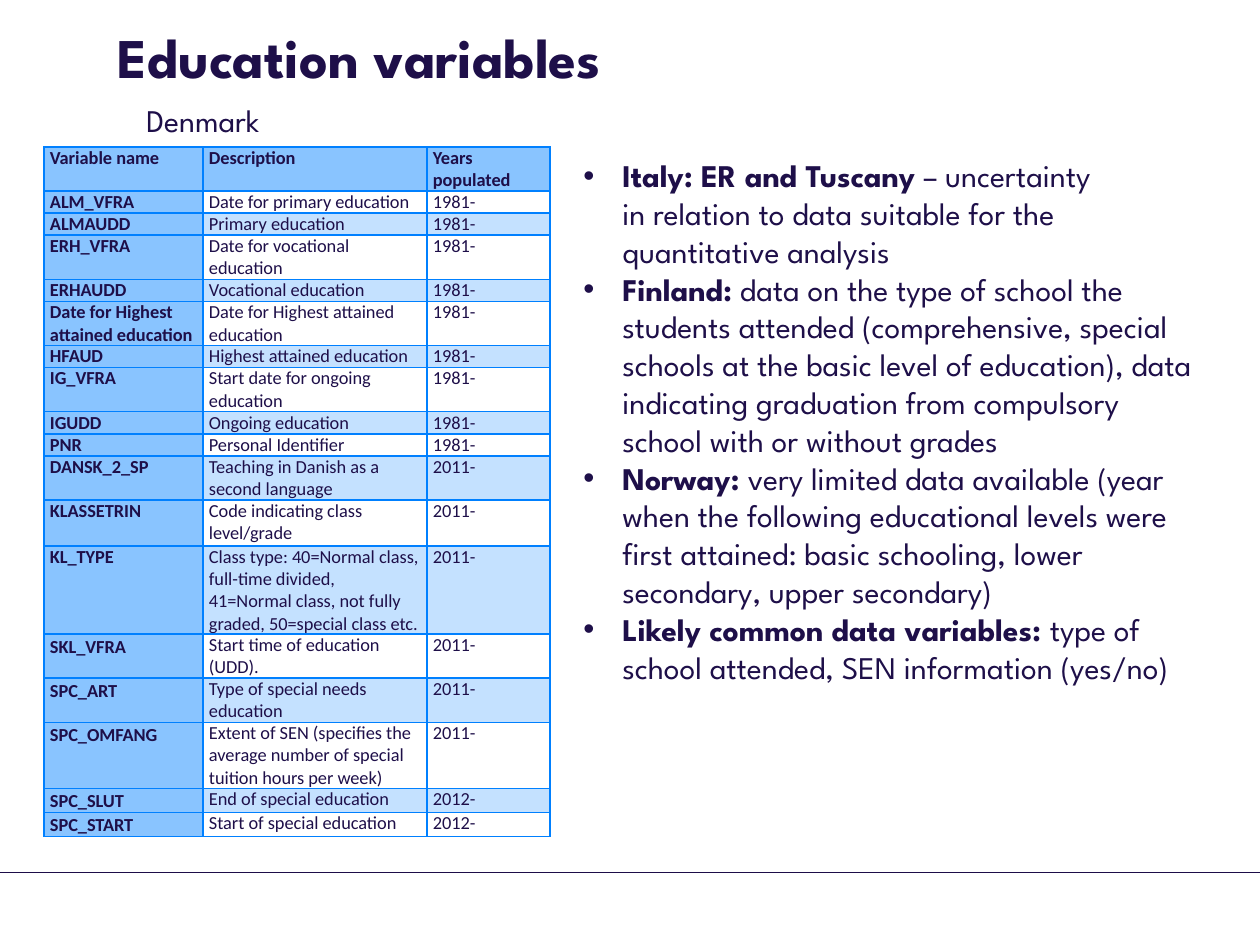
from lxml.etree import SubElement
from pptx import Presentation
from pptx.dml.color import RGBColor
from pptx.enum.shapes import MSO_CONNECTOR
from pptx.enum.text import MSO_ANCHOR
from pptx.oxml.ns import qn
from pptx.util import Pt

PX = 914400 // 126
NAVY = RGBColor(0x1E, 0x0F, 0x49)
RULE = RGBColor(0x1D, 0x0D, 0x49)
BLUE = RGBColor(0x00, 0x80, 0xFF)
HEADER = RGBColor(0x89, 0xC4, 0xFF)
BAND = RGBColor(0xC4, 0xE1, 0xFF)
WHITE = RGBColor(0xFF, 0xFF, 0xFF)
DISPLAY = "League Spartan"
BODY = "Calibri"

HEADINGS = ("Variable name", "Description", "Years populated", 44)
VARIABLES = [
    ("ALM_VFRA", "Date for primary education", "1981-", 22),
    ("ALMAUDD", "Primary education", "1981-", 22),
    ("ERH_VFRA", "Date for vocational education", "1981-", 44),
    ("ERHAUDD", "Vocational education", "1981-", 22),
    ("Date for Highest attained education",
     "Date for Highest attained education", "1981-", 44),
    ("HFAUD", "Highest attained education", "1981-", 22),
    ("IG_VFRA", "Start date for ongoing education", "1981-", 44),
    ("IGUDD", "Ongoing education", "1981-", 22),
    ("PNR", "Personal Identifier", "1981-", 22),
    ("DANSK_2_SP", "Teaching in Danish as a second language", "2011-", 44),
    ("KLASSETRIN", "Code indicating class level/grade", "2011-", 46),
    ("KL_TYPE", "Class type: 40=Normal class, full-time divided, 41=Normal class, "
     "not fully graded, 50=special class etc.", "2011-", 88),
    ("SKL_VFRA", "Start time of education (UDD).", "2011-", 44),
    ("SPC_ART", "Type of special needs education", "2011-", 44),
    ("SPC_OMFANG", "Extent of SEN (specifies the average number of special "
     "tuition hours per week)", "2011-", 66),
    ("SPC_SLUT", "End of special education", "2012-", 24),
    ("SPC_START", "Start of special education", "2012-", 24),
]
COLUMN_WIDTHS = (159, 224, 123)

COUNTRIES = [
    ("•", "Italy: ER and Tuscany ", "– uncertainty"),
    ("", "", "in relation to data suitable for the quantitative analysis"),
    ("•", "Finland:", " data on the type of school the students attended "
     "(comprehensive, special schools at the basic level of education), data "
     "indicating graduation from compulsory school with or without grades"),
    ("•", "Norway: ", "very limited data available (year when the following "
     "educational levels were first attained: basic schooling, lower secondary, "
     "upper secondary)"),
    ("•", "Likely common data variables: ",
     "type of school attended, SEN information (yes/no)"),
]


def add_run(paragraph, text, size, font, bold=False):
    run = paragraph.add_run()
    run.text = text
    run.font.size = Pt(size)
    run.font.name = font
    run.font.bold = bold
    run.font.color.rgb = NAVY


def add_frame(slide, *box):
    frame = slide.shapes.add_textbox(*(n * PX for n in box)).text_frame
    frame.word_wrap = True
    return frame


def hang(paragraph, bullet, indent):
    props = paragraph._p.get_or_add_pPr()
    props.set("marL", str(indent * PX))
    props.set("indent", str(-indent * PX if bullet else 0))
    if bullet:
        SubElement(props, qn("a:buFont"), typeface="Arial")
        SubElement(props, qn("a:buChar"), char=bullet)
    else:
        SubElement(props, qn("a:buNone"))


def add_borders(cell):
    props = cell._tc.get_or_add_tcPr()
    for index, side in enumerate(("lnL", "lnR", "lnT", "lnB")):
        border = props.makeelement(qn(f"a:{side}"), {"w": str(Pt(1))})
        fill = SubElement(border, qn("a:solidFill"))
        SubElement(fill, qn("a:srgbClr"), val=str(BLUE))
        props.insert(index, border)


def add_variables(slide):
    rows = [HEADINGS, *VARIABLES]
    height = sum(row[-1] for row in rows)
    table = slide.shapes.add_table(
        len(rows), len(COLUMN_WIDTHS),
        44 * PX, 147 * PX, sum(COLUMN_WIDTHS) * PX, height * PX).table
    table.first_row = table.horz_banding = False
    for column, width in zip(table.columns, COLUMN_WIDTHS):
        column.width = width * PX
    for r, (*texts, row_height) in enumerate(rows):
        table.rows[r].height = row_height * PX
        for c, text in enumerate(texts):
            cell = table.cell(r, c)
            heading = r == 0 or c == 0
            cell.margin_left = cell.margin_right = 6 * PX
            cell.margin_top = cell.margin_bottom = 0
            cell.fill.solid()
            cell.fill.fore_color.rgb = HEADER if heading else WHITE if r % 2 else BAND
            add_borders(cell)
            paragraph = cell.text_frame.paragraphs[0]
            if c == 0 and text.startswith(("SKL", "SPC")):
                paragraph.line_spacing = 1.07
            add_run(paragraph, text, 10.5, BODY, heading)


def add_countries(slide):
    frame = add_frame(slide, 571, 150, 634, 738)
    for i, (bullet, label, detail) in enumerate(COUNTRIES):
        paragraph = frame.add_paragraph() if i else frame.paragraphs[0]
        hang(paragraph, bullet, 39)
        if label:
            add_run(paragraph, label, 18, DISPLAY, True)
        add_run(paragraph, detail, 18, DISPLAY)


def main():
    deck = Presentation()
    deck.slide_width, deck.slide_height = 1260 * PX, 945 * PX
    slide = deck.slides.add_slide(deck.slide_layouts[6])

    footer_rule = slide.shapes.add_connector(
        MSO_CONNECTOR.STRAIGHT, 0, 872 * PX, 1260 * PX, 872 * PX)
    footer_rule.line.color.rgb = RULE
    footer_rule.line.width = Pt(0.25)
    SubElement(footer_rule._element.spPr, qn("a:effectLst"))

    title = add_frame(slide, 105, 16, 1041, 154)
    title.vertical_anchor = MSO_ANCHOR.TOP
    add_run(title.paragraphs[0], "Education variables", 32, DISPLAY, True)

    add_variables(slide)
    country = add_frame(slide, 134, 95, 202, 50)
    add_run(country.paragraphs[0], "Denmark", 18, DISPLAY)
    add_countries(slide)
    deck.save("out.pptx")


if __name__ == "__main__":
    main()
